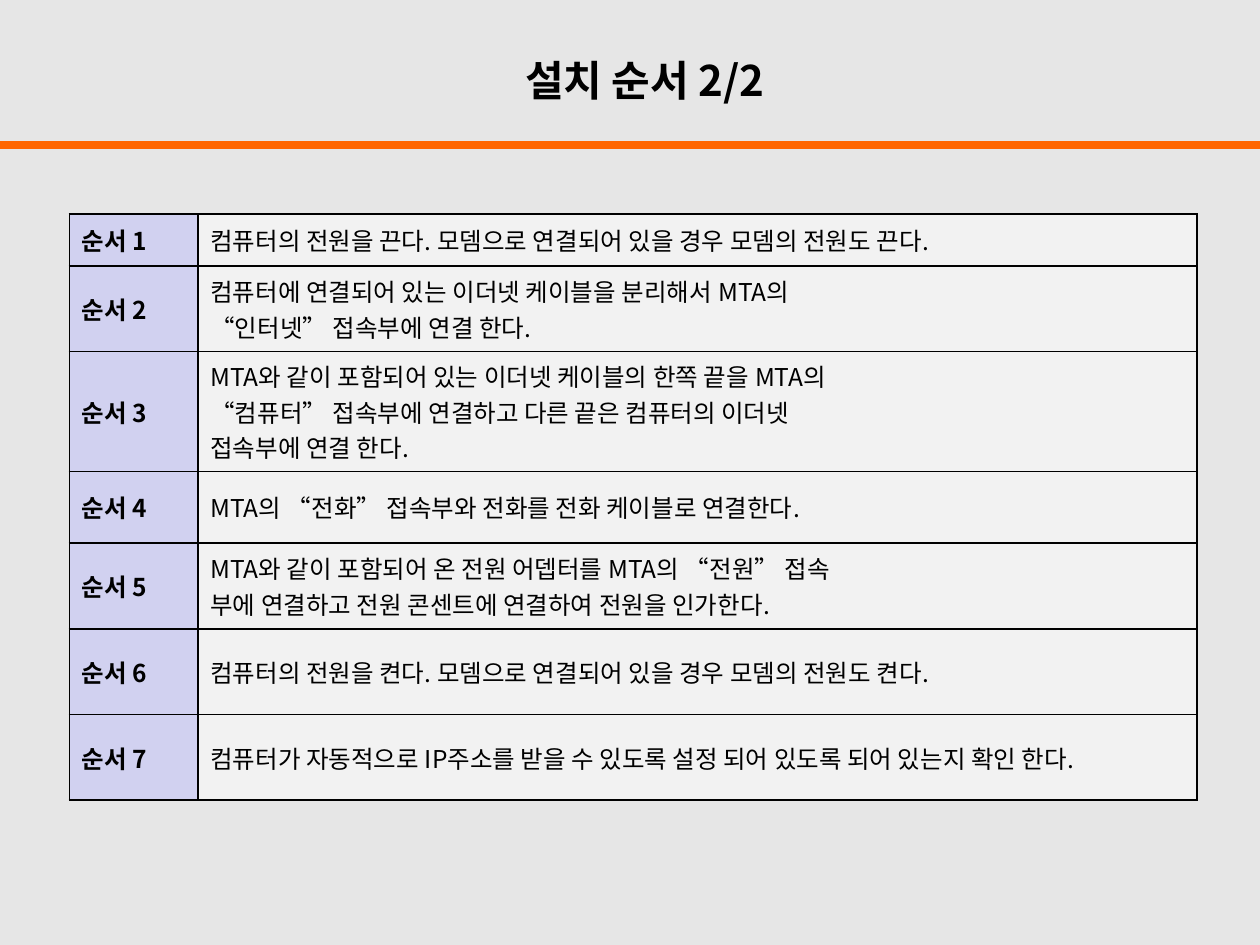
import pptx
import pptx.util
import pptx.dml.color
import pptx.enum.shapes
import pptx.enum.text
import pptx.oxml
import pptx.oxml.ns
from lxml import etree

Inches, Pt = pptx.util.Inches, pptx.util.Pt
RGB = pptx.dml.color.RGBColor.from_string
qn = pptx.oxml.ns.qn
MIDDLE = pptx.enum.text.MSO_ANCHOR.MIDDLE

COLORS = {"background": "E6E6E6", "rule": "FF6600", "ink": "000000",
          "label": "D1D1F0", "body": "F2F2F2"}
FONT = "Noto Sans CJK KR"
COLUMNS = [1.02, 7.93]
STEPS = [
    (0.41, "컴퓨터의 전원을 끈다. 모뎀으로 연결되어 있을 경우 모뎀의 전원도 끈다."),
    (0.68, "컴퓨터에 연결되어 있는 이더넷 케이블을 분리해서 MTA의\n"
           "“인터넷” 접속부에 연결 한다."),
    (0.95, "MTA와 같이 포함되어 있는 이더넷 케이블의 한쪽 끝을 MTA의\n"
           "“컴퓨터” 접속부에 연결하고 다른 끝은 컴퓨터의 이더넷\n"
           "접속부에 연결 한다."),
    (0.57, "MTA의 “전화” 접속부와 전화를 전화 케이블로 연결한다."),
    (0.68, "MTA와 같이 포함되어 온 전원 어뎁터를 MTA의 “전원” 접속\n"
           "부에 연결하고 전원 콘센트에 연결하여 전원을 인가한다."),
    (0.68, "컴퓨터의 전원을 켠다. 모뎀으로 연결되어 있을 경우 모뎀의 전원도 켠다."),
    (0.68, "컴퓨터가 자동적으로 IP주소를 받을 수 있도록 설정 되어 있도록 되어 있는지 확인 한다."),
]


def style_paragraph(p, size, bold):
    """Set the font for Latin and Korean text alike."""
    p.font.name, p.font.size, p.font.bold = FONT, Pt(size), bold
    p.font.color.rgb = RGB(COLORS["ink"])
    props = p._p.pPr.find(qn("a:defRPr"))
    etree.SubElement(props, qn("a:ea")).set("typeface", FONT)


def fill_cell(cell, text, color, bold):
    """Write the text, one paragraph a line, with fill and thin borders."""
    cell.text = text
    cell.vertical_anchor = MIDDLE
    cell.margin_left = cell.margin_right = Inches(0.1)
    cell.margin_top = cell.margin_bottom = Inches(0.05)
    cell.fill.solid()
    cell.fill.fore_color.rgb = RGB(color)
    for p in cell.text_frame.paragraphs:
        style_paragraph(p, 14, bold)
        p._p.pPr.set("marL", str(Inches(0.38)))
        p._p.pPr.set("indent", str(-Inches(0.38)))
    for i, side in enumerate(["lnL", "lnR", "lnT", "lnB"]):
        cell._tc.tcPr.insert(i, pptx.oxml.parse_xml(
            f'<a:{side} {pptx.oxml.ns.nsdecls("a")} w="{Pt(1)}"><a:solidFill>'
            f'<a:srgbClr val="{COLORS["ink"]}"/></a:solidFill></a:{side}>'))


prs = pptx.Presentation()
prs.slide_width, prs.slide_height = Inches(10), Inches(7.5)
s = prs.slides.add_slide(prs.slide_layouts[6])
s.background.fill.solid()
s.background.fill.fore_color.rgb = RGB(COLORS["background"])

# Rule under the title
rule = s.shapes.add_connector(pptx.enum.shapes.MSO_CONNECTOR.STRAIGHT,
                              0, Inches(1.15), prs.slide_width, Inches(1.15))
rule.line.color.rgb = RGB(COLORS["rule"])
rule.line.width = Pt(4.5)
etree.SubElement(rule._element.spPr, qn("a:effectLst"))

# Installation steps
table = s.shapes.add_table(
    len(STEPS), len(COLUMNS), Inches(0.55), Inches(1.7), Inches(sum(COLUMNS)),
    Inches(sum(height for height, text in STEPS))).table
table.first_row = table.horz_banding = False
for column, width in zip(table.columns, COLUMNS):
    column.width = Inches(width)
for i, (height, text) in enumerate(STEPS):
    table.rows[i].height = Inches(height)
    fill_cell(table.cell(i, 0), f"순서 {i + 1}", COLORS["label"], True)
    fill_cell(table.cell(i, 1), text, COLORS["body"], False)

# Title
tf = s.shapes.add_textbox(Inches(2.48), Inches(0.36),
                          Inches(5.35), Inches(0.55)).text_frame
tf.word_wrap = True
tf.vertical_anchor = MIDDLE
p = tf.paragraphs[0]
p.text = "설치 순서 2/2 "
p.alignment = pptx.enum.text.PP_ALIGN.CENTER
style_paragraph(p, 24, True)

prs.save("out.pptx")
